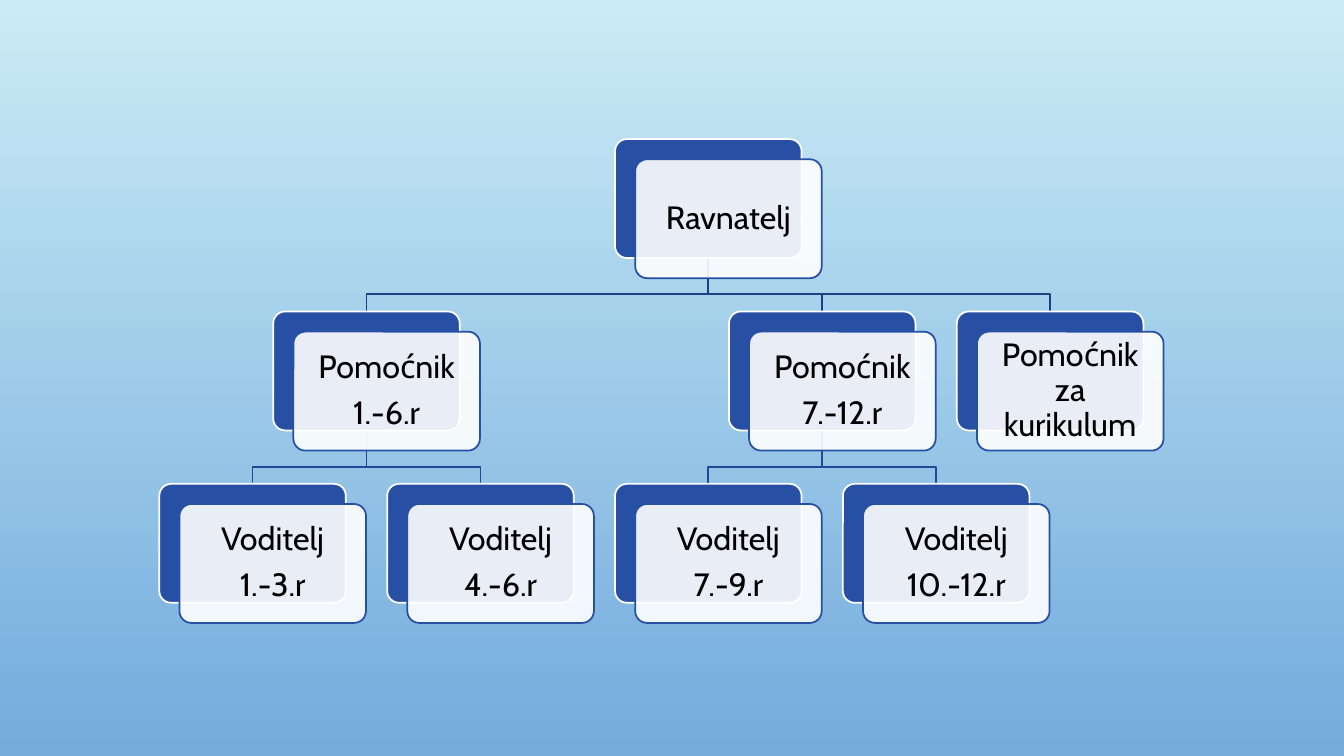
from pptx import Presentation
from pptx.dml.color import RGBColor
from pptx.enum.shapes import MSO_SHAPE
from pptx.enum.text import MSO_ANCHOR, PP_ALIGN
from pptx.oxml.ns import qn
from pptx.util import Inches, Pt
from lxml import etree

COLORS = {
    "sky_top": "CBECF5", "sky_bottom": "73ABDD",
    "blue": "274FA4", "white": "FFFFFF", "black": "000000",
    "branch0": "1F3F83", "branch1": "234895",
}
LEFT, TOP = 1.58, 1.38
COL_STEP, ROW_STEP = 1.13, 1.71
WIDTH, HEIGHT = 1.85, 1.18
OFFSET, BEND = 0.2, 0.36

ROLES = [
    (4, 0, ["Ravnatelj"]),
    (1, 1, ["Pomoćnik", "1.-6.r"]),
    (0, 2, ["Voditelj", "1.-3.r"]),
    (2, 2, ["Voditelj", "4.-6.r"]),
    (5, 1, ["Pomoćnik", "7.-12.r"]),
    (4, 2, ["Voditelj", "7.-9.r"]),
    (6, 2, ["Voditelj", "10.-12.r"]),
    (7, 1, ["Pomoćnik za kurikulum"]),
]
BRANCHES = [(0, 4, [1, 5, 7]), (1, 1, [0, 2]), (1, 5, [4, 6])]


def rgb(name):
    return RGBColor.from_string(COLORS[name])


def add_card(x, y, fill, line):
    sp = s.shapes.add_shape(MSO_SHAPE.ROUNDED_RECTANGLE, Inches(x), Inches(y),
                            Inches(WIDTH), Inches(HEIGHT))
    sp.adjustments[0] = 0.1
    sp.shadow.inherit = False
    sp.fill.solid()
    sp.fill.fore_color.rgb = rgb(fill)
    sp.line.color.rgb = rgb(line)
    sp.line.width = Pt(1.25)
    return sp


prs = Presentation()
prs.slide_width, prs.slide_height = Inches(13.33), Inches(7.5)
s = prs.slides.add_slide(prs.slide_layouts[6])

bg = s.background.fill
bg.gradient()
bg.gradient_angle = 270
for stop, position, name in zip(bg.gradient_stops, (0, 1), ("sky_top", "sky_bottom")):
    stop.position = position
    stop.color.rgb = rgb(name)

for row, parent, children in BRANCHES:
    x = LEFT + parent * COL_STEP + WIDTH / 2
    y = TOP + row * ROW_STEP + HEIGHT
    for child in children:
        child_x = LEFT + child * COL_STEP + WIDTH / 2
        child_y = TOP + (row + 1) * ROW_STEP
        fb = s.shapes.build_freeform(Inches(x), Inches(y))
        fb.add_line_segments([(Inches(px), Inches(py)) for px, py in
                              [(x, y + BEND), (child_x, y + BEND), (child_x, child_y)]],
                             close=False)
        sp = fb.convert_to_shape()
        sp.shadow.inherit = False
        sp.fill.background()
        sp.line.color.rgb = rgb(f"branch{row}")
        sp.line.width = Pt(1.25)

for col, row, lines in ROLES:
    x, y = LEFT + col * COL_STEP, TOP + row * ROW_STEP
    add_card(x, y, "blue", "white")
    sp = add_card(x + OFFSET, y + OFFSET, "white", "blue")
    color = sp.fill._xPr.find(qn("a:solidFill"))[0]
    etree.SubElement(color, qn("a:alpha"), val="90000")

    tf = sp.text_frame
    tf.word_wrap = True
    tf.vertical_anchor = MSO_ANCHOR.MIDDLE
    tf.margin_left = tf.margin_right = tf.margin_top = tf.margin_bottom = Inches(0.1)
    tf.text = "\n".join(lines)
    for p in tf.paragraphs:
        p.alignment = PP_ALIGN.CENTER
        p.line_spacing = 0.9
        p.space_after = Pt(8)
        p.font.name = "Cabin"
        p.font.size = Pt(23)
        p.font.color.rgb = rgb("black")

prs.save("out.pptx")
